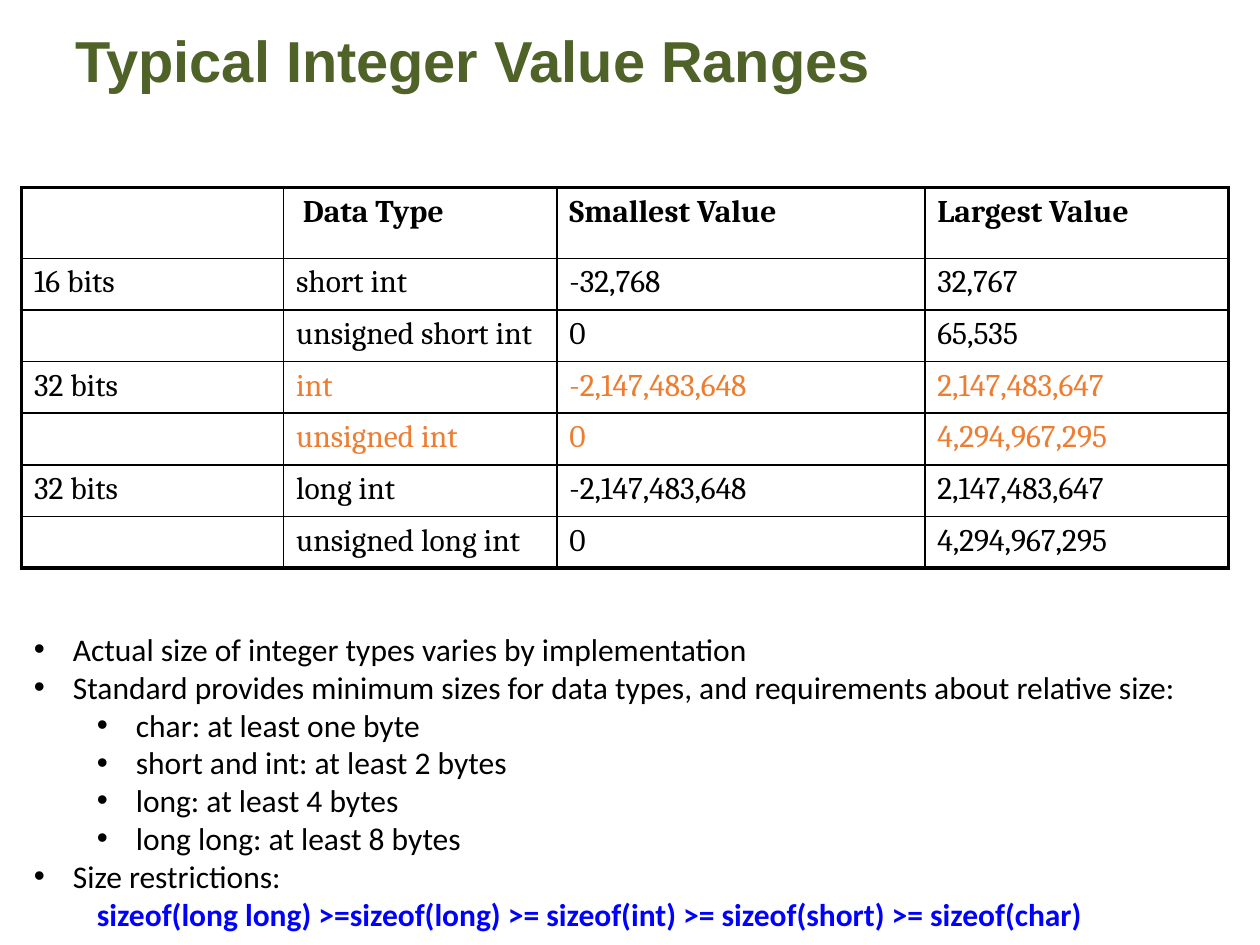
import pptx
import pptx.dml.color
import pptx.enum.text
import pptx.oxml
import pptx.oxml.ns
import pptx.util
from pptx.util import Inches, Pt

COLORS = {"title": "4F6228", "text": "000000", "highlight": "ED7D31", "rule": "0000FF"}
COLUMN_WIDTHS = [2.08, 2.17, 2.92, 2.41]
HEADER_HEIGHT, ROW_HEIGHT = 0.56, 0.41
THIN, THICK = 1, 2.25
HIGHLIGHTED_ROWS = (3, 4)
RANGES = [
    ["", " Data Type", "Smallest Value", "Largest Value"],
    ["16 bits", "short int", "-32,768", "32,767"],
    ["", "unsigned short int", "0", "65,535"],
    ["32 bits", "int", "-2,147,483,648", "2,147,483,647"],
    ["", "unsigned int", "0", "4,294,967,295"],
    ["32 bits", "long int", "-2,147,483,648", "2,147,483,647"],
    ["", "unsigned long int", "0", "4,294,967,295"],
]
NOTES = [
    (0, "Actual size of integer types varies by implementation"),
    (0, "Standard provides minimum sizes for data types, and requirements about relative size:"),
    (1, "char: at least one byte"),
    (1, "short and int: at least 2 bytes"),
    (1, "long: at least 4 bytes"),
    (1, "long long: at least 8 bytes"),
    (0, "Size restrictions:"),
]
SIZE_RULE = "\tsizeof(long long) >=sizeof(long) >= sizeof(int) >= sizeof(short) >= sizeof(char)"


def format_runs(paragraph, font_name, size, color, bold=False):
    for run in paragraph.runs:
        run.font.name = font_name
        run.font.size = Pt(size)
        run.font.bold = bold
        run.font.color.rgb = pptx.dml.color.RGBColor.from_string(COLORS[color])


def set_borders(cell, widths):
    properties = cell._tc.get_or_add_tcPr()
    for index, (side, width) in enumerate(widths.items()):
        line = pptx.oxml.parse_xml(
            f'<a:ln{side} {pptx.oxml.ns.nsdecls("a")} w="{Pt(width)}"><a:solidFill>'
            f'<a:srgbClr val="{COLORS["text"]}"/></a:solidFill></a:ln{side}>'
        )
        properties.insert(index, line)


def set_bullet(paragraph, level):
    paragraph.level = level
    properties = paragraph._p.get_or_add_pPr()
    properties.set("marL", str(Inches(0.31 + 0.5 * level)))
    properties.set("indent", str(Inches(-0.31)))
    for tag in ('buFont typeface="Arial"', 'buChar char="•"'):
        properties.append(pptx.oxml.parse_xml(f'<a:{tag} {pptx.oxml.ns.nsdecls("a")}/>'))


def add_title(slide):
    title = slide.shapes.title
    title.left, title.top = Inches(0.5), Inches(0.17)
    title.width, title.height = Inches(9), Inches(0.67)
    title.text_frame.text = "Typical Integer Value Ranges"
    title.text_frame.vertical_anchor = pptx.enum.text.MSO_ANCHOR.MIDDLE
    paragraph = title.text_frame.paragraphs[0]
    paragraph.alignment = pptx.enum.text.PP_ALIGN.LEFT
    paragraph.line_spacing = 0.9
    format_runs(paragraph, "Arial", 33, "title", bold=True)


def add_range_table(slide):
    last_row, last_column = len(RANGES) - 1, len(COLUMN_WIDTHS) - 1
    table = slide.shapes.add_table(
        len(RANGES), len(COLUMN_WIDTHS), Inches(0.17), Inches(1.49), Inches(9.58), Inches(3)
    ).table
    table.first_row = table.horz_banding = False
    for column, width in zip(table.columns, COLUMN_WIDTHS):
        column.width = Inches(width)
    for row_index, values in enumerate(RANGES):
        table.rows[row_index].height = Inches(ROW_HEIGHT if row_index else HEADER_HEIGHT)
        for column_index, value in enumerate(values):
            cell = table.cell(row_index, column_index)
            cell.fill.background()
            set_borders(cell, {
                "L": THICK if column_index == 0 else THIN,
                "R": THICK if column_index == last_column else THIN,
                "T": THICK if row_index == 0 else THIN,
                "B": THICK if row_index == last_row else THIN,
            })
            if value:
                cell.text_frame.text = value
                paragraph = cell.text_frame.paragraphs[0]
                paragraph.space_before = Pt(3.6)
                highlighted = row_index in HIGHLIGHTED_ROWS and column_index > 0
                color = "highlight" if highlighted else "text"
                format_runs(paragraph, "Cambria", 18, color, bold=row_index == 0)


def add_notes_box(slide):
    box = slide.shapes.add_textbox(Inches(0.17), Inches(4.95), Inches(9.58), Inches(2.52))
    frame = box.text_frame
    frame.word_wrap = True
    frame.auto_size = pptx.enum.text.MSO_AUTO_SIZE.SHAPE_TO_FIT_TEXT
    frame.text = "\n".join([text for _, text in NOTES] + [SIZE_RULE])
    for paragraph, (level, _) in zip(frame.paragraphs, NOTES):
        set_bullet(paragraph, level)
        format_runs(paragraph, "Calibri", 18, "text")
    format_runs(frame.paragraphs[-1], "Calibri", 18, "rule", bold=True)


def main():
    presentation = pptx.Presentation()
    presentation.slide_width, presentation.slide_height = Inches(10), Inches(7.5)
    slide = presentation.slides.add_slide(presentation.slide_layouts[5])
    add_title(slide)
    add_range_table(slide)
    add_notes_box(slide)
    presentation.save("out.pptx")


if __name__ == "__main__":
    main()
